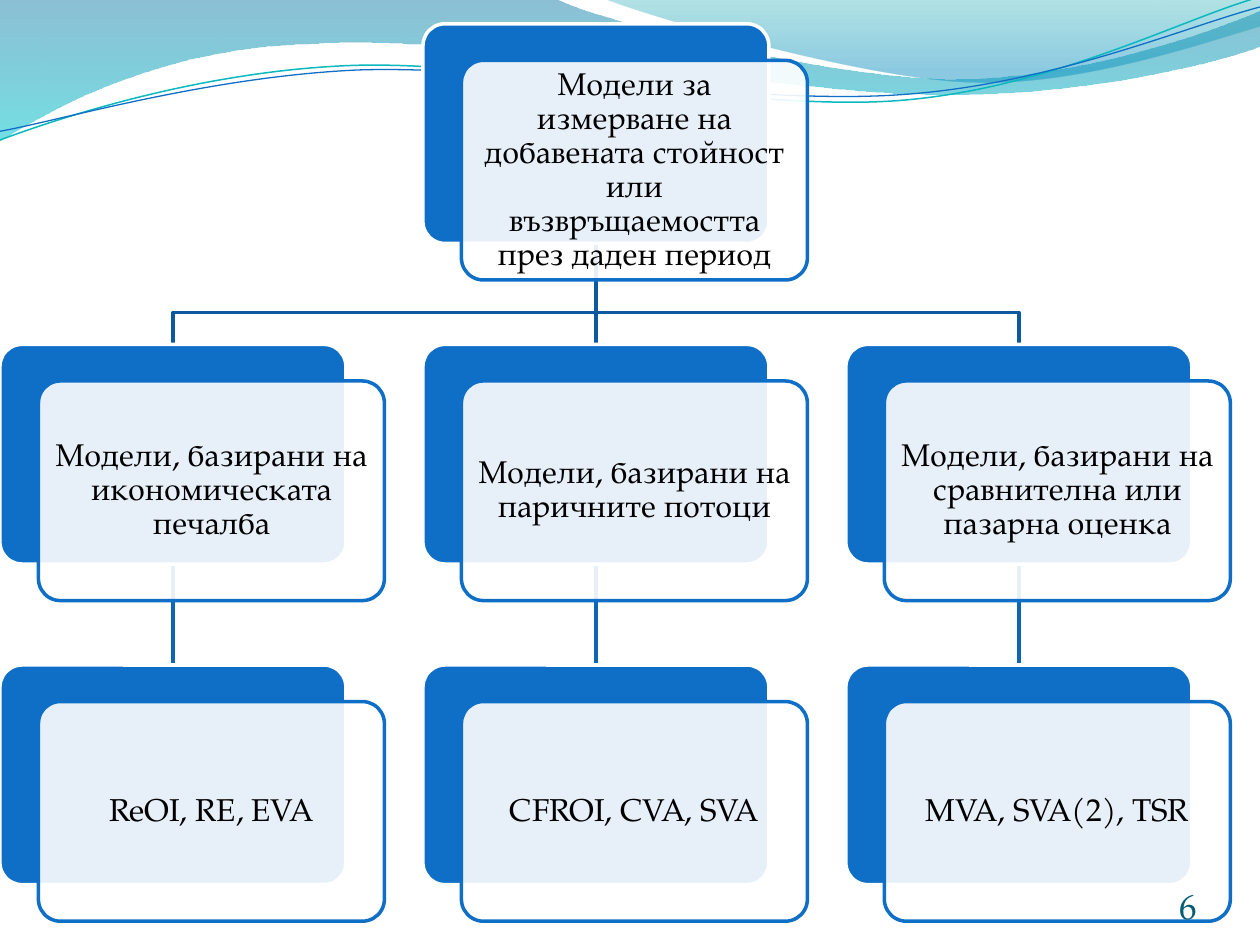
from dataclasses import dataclass

from lxml import etree
from pptx import Presentation
from pptx import util as u
from pptx.dml.color import RGBColor
from pptx.enum import shapes, text
from pptx.oxml.ns import qn

BLUE = RGBColor(0x0F, 0x6F, 0xC6)
UPPER_LINK = RGBColor(0x0C, 0x59, 0x9F)
LOWER_LINK = RGBColor(0x0E, 0x65, 0xB4)
TEAL = RGBColor(0x0A, 0xB8, 0xBF)
WHITE = RGBColor(0xFF, 0xFF, 0xFF)
BLACK = RGBColor(0x00, 0x00, 0x00)
NUMBER = RGBColor(0x04, 0x5D, 0x75)
DEEP_BLUE = RGBColor(0x00, 0x74, 0xA1)
CYAN = RGBColor(0x00, 0xC6, 0xCF)
SEA_GREEN = RGBColor(0x00, 0xA1, 0xA9)
SKY_BLUE = RGBColor(0x00, 0x8B, 0xBF)

FONT = "TeX Gyre Pagella"
CARD_WIDTH, CARD_HEIGHT = 197.7, 125.5
COLUMN_STEP, ROW_STEP, TOP = 241.7, 183.2, 13.6
SHIFT_X, SHIFT_Y = 22, 20.9
BEND, LINK_WIDTH = 39.5, 7.2
TEXT_GAP, TEXT_INSET = 3.7, 5.4


@dataclass(frozen=True)
class Card:
    column: int
    row: int
    wording: str

    @property
    def left(self) -> float:
        return self.column * COLUMN_STEP

    @property
    def top(self) -> float:
        return TOP + self.row * ROW_STEP

    @property
    def center(self) -> float:
        return self.left + CARD_WIDTH / 2

    @property
    def bottom(self) -> float:
        return self.top + CARD_HEIGHT


@dataclass(frozen=True)
class Stop:
    position: float
    color: RGBColor
    opacity: int


@dataclass(frozen=True)
class Wave:
    segments: tuple
    stops: tuple = ()
    line: RGBColor | None = None
    weight: float = 0


WAVES = (
    Wave(((0, 0), (317, -1), (343, 12, 478, 45, 546, 45),
          (614, 45, 690, 19, 720, 6), (721, 26),
          (708, 32, 626, 55, 537, 54), (448, 54, 275, 20, 185, 24.5),
          (93, 26, 33, 60, -1, 81), (0, 0)),
         stops=(Stop(0, DEEP_BLUE, 45), Stop(1, CYAN, 55))),
    Wave(((345, -1), (366, 8, 491, 45, 554, 47),
          (616, 50, 692, 23, 720, 15), (720, 0), (345, -1)),
         stops=(Stop(0, SEA_GREEN, 30), Stop(0.8, SKY_BLUE, 45))),
    Wave(((0, 80), (35, 67, 114, 41, 199, 37.5),
          (284, 34, 427, 64, 513, 57.5), (600, 51, 675, 11, 719, -1.5)),
         line=TEAL, weight=0.85),
    Wave(((0, 75), (34, 69, 118, 44, 204, 40),
          (290, 37, 430, 60.5, 516, 54), (602, 48, 678, 15, 720, 4)),
         line=BLUE, weight=0.75),
)

ROOT = Card(1, 0, "Модели за измерване на добавената стойност или "
                  "възвръщаемостта през даден период")
MODELS = (
    Card(0, 1, "Модели, базирани на икономическата печалба"),
    Card(1, 1, "Модели, базирани на паричните потоци"),
    Card(2, 1, "Модели, базирани на сравнителна или пазарна оценка"),
)
MEASURES = (
    Card(0, 2, "ReOI, RE, EVA"),
    Card(1, 2, "CFROI, CVA, SVA"),
    Card(2, 2, "MVA, SVA(2), TSR"),
)


def apply(target, values: dict) -> None:
    for name, value in values.items():
        setattr(target, name, value)


def set_opacity(color_element, percent: int) -> None:
    etree.SubElement(color_element, qn("a:alpha"), val=str(percent * 1000))


def set_line(shape, color: RGBColor, weight: float) -> None:
    shape.line.color.rgb = color
    shape.line.width = u.Pt(weight)


def add_outline(page, segments: tuple, close: bool = False):
    points = [(u.Pt(x), u.Pt(y)) for segment in segments
              for x, y in zip(segment[::2], segment[1::2])]
    builder = page.shapes.build_freeform(*points[0])
    builder.add_line_segments(points[1:], close=close)
    outline = builder.convert_to_shape()
    outline.shadow.inherit = False
    steps = iter(list(outline._element.iter(qn("a:lnTo"))))
    for segment in segments[1:]:
        first = next(steps)
        if len(segment) == 6:
            curve = etree.Element(qn("a:cubicBezTo"))
            first.addprevious(curve)
            for step in (first, next(steps), next(steps)):
                curve.append(step[0])
                step.getparent().remove(step)
    return outline


def draw_wave(page, wave: Wave) -> None:
    outline = add_outline(page, wave.segments, bool(wave.stops))
    if not wave.stops:
        outline.fill.background()
        set_line(outline, wave.line, wave.weight)
        return
    outline.line.fill.background()
    outline.fill.gradient()
    outline.fill.gradient_angle = 270
    for target, stop in zip(outline.fill.gradient_stops, wave.stops):
        target.color.rgb = stop.color
        target.position = stop.position
    colors = list(outline._element.spPr.iter(qn("a:srgbClr")))
    for element, stop in zip(colors, wave.stops):
        set_opacity(element, stop.opacity)


def widen(link) -> None:
    link.left -= u.Pt(LINK_WIDTH / 2)
    link.width = u.Pt(LINK_WIDTH)
    next(link._element.iter(qn("a:path"))).set("w", str(u.Pt(LINK_WIDTH)))
    for point in link._element.iter(qn("a:pt")):
        point.set("x", str(u.Pt(LINK_WIDTH / 2)))


def draw_link(page, parent: Card, child: Card, color: RGBColor) -> None:
    start, end = (parent.center, parent.bottom), (child.center, child.top)
    if parent.column == child.column:
        link = add_outline(page, (start, end))
        widen(link)
    else:
        turn = parent.bottom + BEND
        link = add_outline(page, (start, (parent.center, turn), (child.center, turn), end))
    link.fill.background()
    set_line(link, color, 2)


def write(page, place: tuple, wording: str, inset: float, anchor,
          para_values: dict, size: float, color: RGBColor) -> None:
    box = page.shapes.add_textbox(*map(u.Pt, place))
    frame = box.text_frame
    margins = {f"margin_{side}": u.Pt(inset) for side in ("left", "right", "top", "bottom")}
    apply(frame, {"word_wrap": True, "vertical_anchor": anchor, **margins})
    para = frame.paragraphs[0]
    apply(para, para_values)
    span = para.add_run()
    span.text = wording
    apply(span.font, {"name": FONT, "size": u.Pt(size)})
    span.font.color.rgb = color


def draw_panel(page, left: float, top: float, fill: RGBColor, line: RGBColor):
    panel = page.shapes.add_shape(
        shapes.MSO_SHAPE.ROUNDED_RECTANGLE, u.Pt(left), u.Pt(top),
        u.Pt(CARD_WIDTH), u.Pt(CARD_HEIGHT))
    panel.adjustments[0] = 0.1
    panel.shadow.inherit = False
    panel.fill.solid()
    panel.fill.fore_color.rgb = fill
    set_line(panel, line, 2)
    return panel


def draw_card(page, card: Card) -> None:
    left, top = card.left + SHIFT_X, card.top + SHIFT_Y
    draw_panel(page, card.left, card.top, BLUE, WHITE)
    front = draw_panel(page, left, top, WHITE, BLUE)
    set_opacity(front._element.spPr.find(qn("a:solidFill"))[0], 90)
    place = (left + TEXT_GAP, top + TEXT_GAP,
             CARD_WIDTH - 2 * TEXT_GAP, CARD_HEIGHT - 2 * TEXT_GAP)
    write(page, place, card.wording, TEXT_INSET, text.MSO_ANCHOR.MIDDLE,
          {"alignment": text.PP_ALIGN.CENTER, "line_spacing": 0.9}, 18, BLACK)


def main() -> None:
    deck = Presentation()
    apply(deck, {"slide_width": u.Pt(720), "slide_height": u.Pt(540)})
    page = deck.slides.add_slide(deck.slide_layouts[6])
    for wave in WAVES:
        draw_wave(page, wave)
    for model, measure in reversed(list(zip(MODELS, MEASURES))):
        draw_link(page, model, measure, LOWER_LINK)
        draw_link(page, ROOT, model, UPPER_LINK)
    branches = [card for pair in zip(MODELS, MEASURES) for card in pair]
    for card in (ROOT, *branches):
        draw_card(page, card)
    write(page, (624, 500.4, 60, 28.8), "6", 0, text.MSO_ANCHOR.BOTTOM,
          {"alignment": text.PP_ALIGN.RIGHT}, 20, NUMBER)
    deck.save("out.pptx")


if __name__ == "__main__":
    main()
